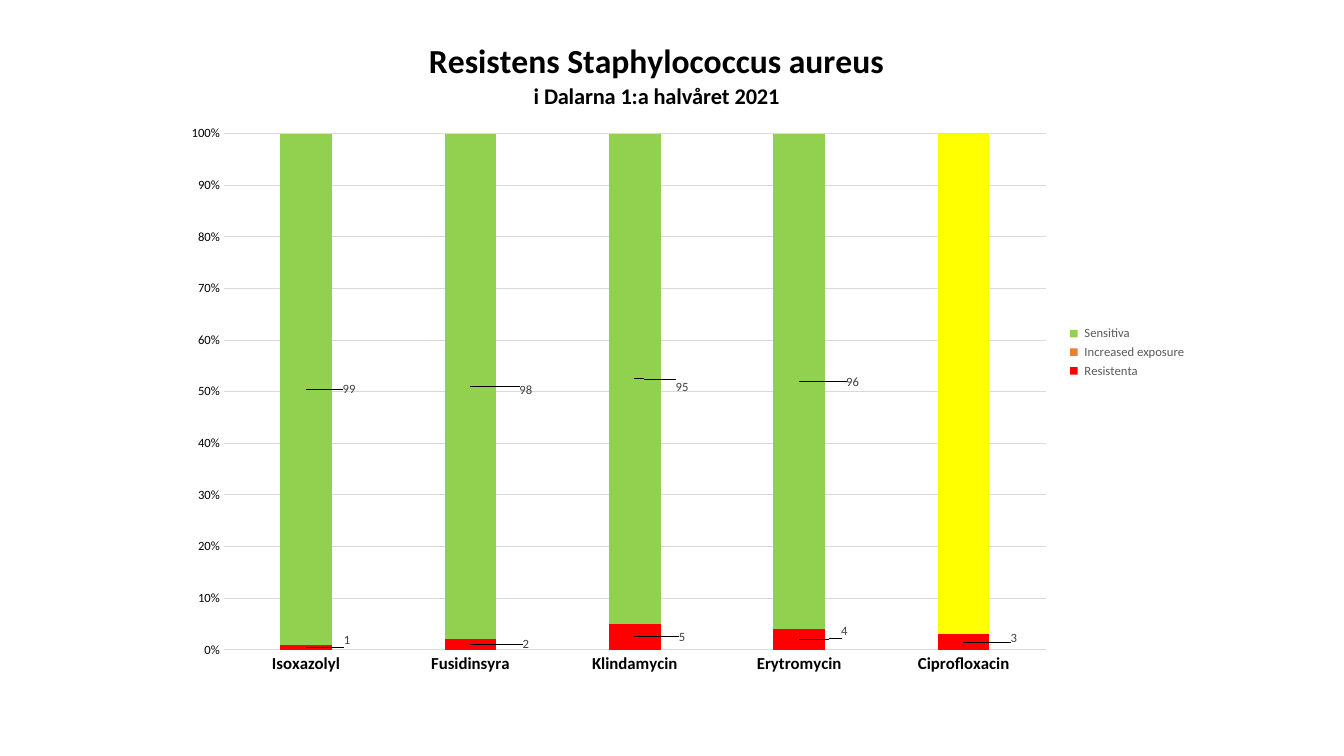
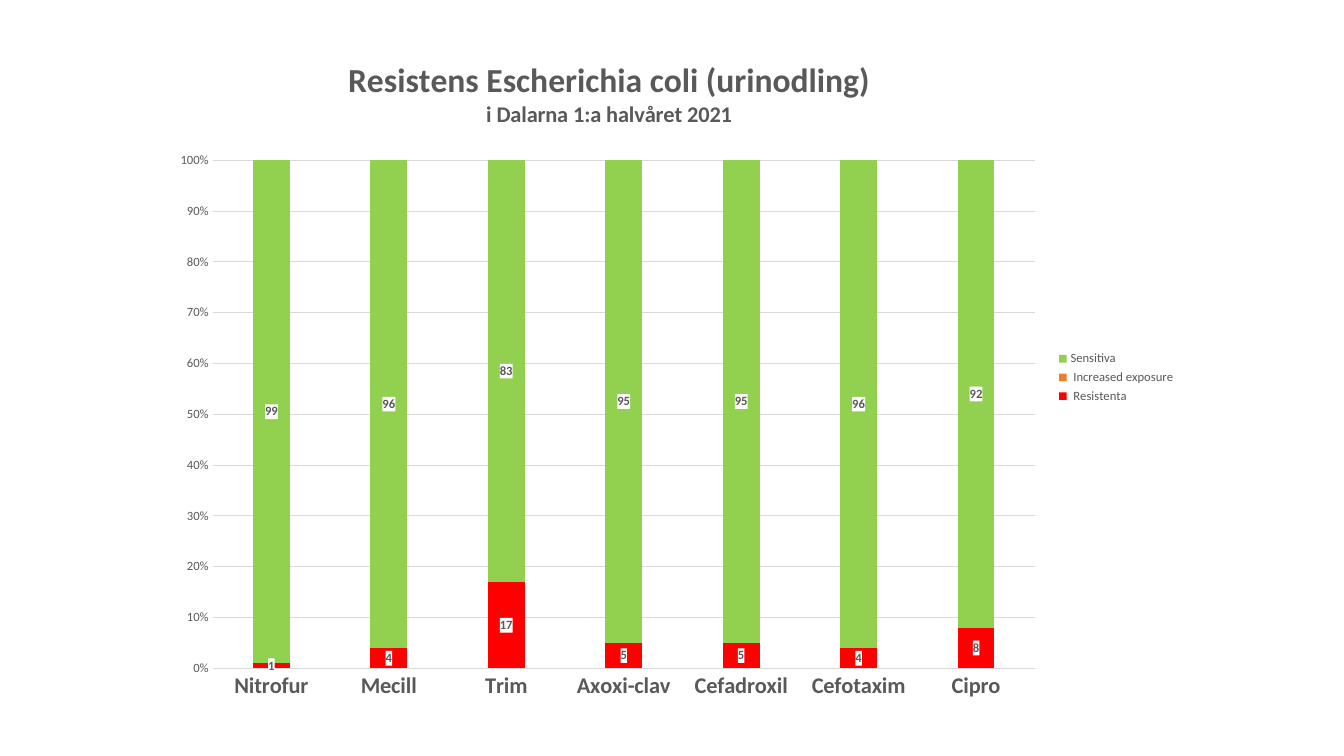
"""Build two slides of stacked resistance charts for Dalarna, first half of 2021."""
from lxml import etree
from pptx import Presentation
from pptx.chart.data import CategoryChartData
from pptx.dml.color import RGBColor
from pptx.enum.chart import XL_CHART_TYPE as CT, XL_LABEL_POSITION as LP
from pptx.enum.chart import XL_LEGEND_POSITION as LG, XL_TICK_MARK as TM
from pptx.oxml import parse_xml
from pptx.oxml.ns import nsdecls, qn
from pptx.util import Inches, Pt

FONT = "Calibri"
BLACK, GREY, DARK, LINE, WHITE = "000000", "595959", "404040", "D9D9D9", "FFFFFF"
RED, ORANGE, GREEN, YELLOW = "FF0000", "ED7D31", "92D050", "FFFF00"
SUBTITLE = "i Dalarna 1:a halvåret 2021"


def rgb(value):
    return RGBColor.from_string(value)


def style_font(font, size, color, bold=False):
    font.name, font.size, font.bold = FONT, Pt(size), bold
    font.color.rgb = rgb(color)


def fill_solid(fill, color):
    fill.solid()
    fill.fore_color.rgb = rgb(color)


def set_layout(parent, index, **values):
    for old in parent.findall(qn("c:layout")):
        parent.remove(old)
    layout = parse_xml(f"<c:layout {nsdecls('c')}><c:manualLayout/></c:layout>")
    for tag, value in values.items():
        etree.SubElement(layout[0], qn(f"c:{tag}")).set("val", str(value))
    parent.insert(index, layout)


def add_title(chart, text, color, x, y):
    title = chart.chart_title
    tf = title.text_frame
    for p, line, size in ((tf.paragraphs[0], text, 24), (tf.add_paragraph(), SUBTITLE, 16)):
        r = p.add_run()
        r.text = line
        style_font(r.font, size, color, True)
    set_layout(title._element, 1, xMode="edge", yMode="edge", x=x, y=y)


def style_axes(chart, color, cat_size):
    cat, val = chart.category_axis, chart.value_axis
    for axis in (cat, val):
        axis.major_tick_mark = axis.minor_tick_mark = TM.NONE
    style_font(cat.tick_labels.font, cat_size, color, True)
    style_font(val.tick_labels.font, 9, color)
    val.minimum_scale, val.maximum_scale, val.major_unit = 0, 1, 0.1
    val.tick_labels.number_format = "0%"
    val.tick_labels.number_format_is_linked = False
    val.format.line.fill.background()
    for line in (cat.format.line, val.major_gridlines.format.line):
        line.color.rgb = rgb(LINE)
        line.width = Pt(0.75)


def add_chart(s, left, top, cats, series, color, cat_size, plot_top, plot_height):
    data = CategoryChartData()
    data.categories = cats
    for name, values in series:
        data.add_series(name, values)
    frame = s.shapes.add_chart(CT.COLUMN_STACKED_100, Inches(left), Inches(top),
                               Inches(10.18), Inches(6.65), data)
    chart = frame.chart
    style_font(chart.font, 10, BLACK)
    plot = chart.plots[0]
    plot.gap_width, plot.overlap, plot.vary_by_categories = 219, 100, False
    for ser, fill in zip(plot.series, (RED, ORANGE, GREEN)):
        fill_solid(ser.format.fill, fill)
        ser.invert_if_negative = False
    style_axes(chart, color, cat_size)
    chart.has_legend = True
    chart.legend.position = LG.RIGHT
    chart.legend.include_in_layout = False
    style_font(chart.legend.font, 9, GREY)
    set_layout(plot._element.getparent(), 0, layoutTarget="inner", xMode="edge", yMode="edge",
               x=0.052, y=plot_top, w=0.801, h=plot_height)
    return chart


def add_offset_labels(ser, offsets):
    for i, (x, y) in enumerate(offsets):
        label = ser.points[i].data_label
        style_font(label.font, 9, DARK)
        label.position = LP.CENTER
    labels = ser.data_labels
    labels.show_value = False
    style_font(labels.font, 9, DARK)
    for item, (x, y) in zip(labels._element.findall(qn("c:dLbl")), offsets):
        set_layout(item, 1, x=x, y=y)


def add_boxed_labels(ser):
    labels = ser.data_labels
    labels.show_value = True
    labels.position = LP.CENTER
    style_font(labels.font, 9, GREY, True)
    box = parse_xml(f'<c:spPr {nsdecls("c", "a")}><a:solidFill><a:srgbClr val="{WHITE}"/>'
                    '</a:solidFill></c:spPr>')
    labels._element.find(qn("c:txPr")).addprevious(box)


def staphylococcus_slide(s):
    chart = add_chart(
        s, 1.69, 0.17,
        ["Isoxazolyl", "Fusidinsyra", "Klindamycin", "Erytromycin", "Ciprofloxacin"],
        [(" Resistenta", (1, 2, 5, 4, 3)),
         (" Increased exposure", (0, 0, 0, 0, 97)),
         (" Sensitiva", (99, 98, 95, 96, 0))],
        BLACK, 12, 0.174, 0.77)
    add_title(chart, "Resistens Staphylococcus aureus", BLACK, 0.249, 0.03)
    resistant, exposure, sensitive = chart.plots[0].series
    fill_solid(exposure.points[4].format.fill, YELLOW)
    add_offset_labels(resistant, [(0.04, -0.01), (0.054, 0), (0.046, 0),
                                  (0.044, -0.012), (0.049, -0.006)])
    add_offset_labels(sensitive, [(0.042, 0), (0.054, 0.006), (0.046, 0.012), (0.052, 0.002)])


def coli_slide(s):
    chart = add_chart(
        s, 1.58, 0.42,
        ["Nitrofur", "Mecill", "Trim", "Axoxi-clav", "Cefadroxil", "Cefotaxim", "Cipro"],
        [(" Resistenta", (1, 4, 17, 5, 5, 4, 8)),
         (" Increased exposure", (0,) * 7),
         ("Sensitiva ", (99, 96, 83, 95, 95, 96, 92))],
        GREY, 16, 0.176, 0.758)
    add_title(chart, "Resistens Escherichia coli (urinodling)", GREY, 0.181, 0.02)
    resistant, exposure, sensitive = chart.plots[0].series
    for ser in (resistant, sensitive):
        add_boxed_labels(ser)


def main():
    prs = Presentation()
    prs.slide_width, prs.slide_height = Inches(13.33), Inches(7.5)
    for build in (staphylococcus_slide, coli_slide):
        build(prs.slides.add_slide(prs.slide_layouts[6]))
    prs.save("out.pptx")


if __name__ == "__main__":
    main()
